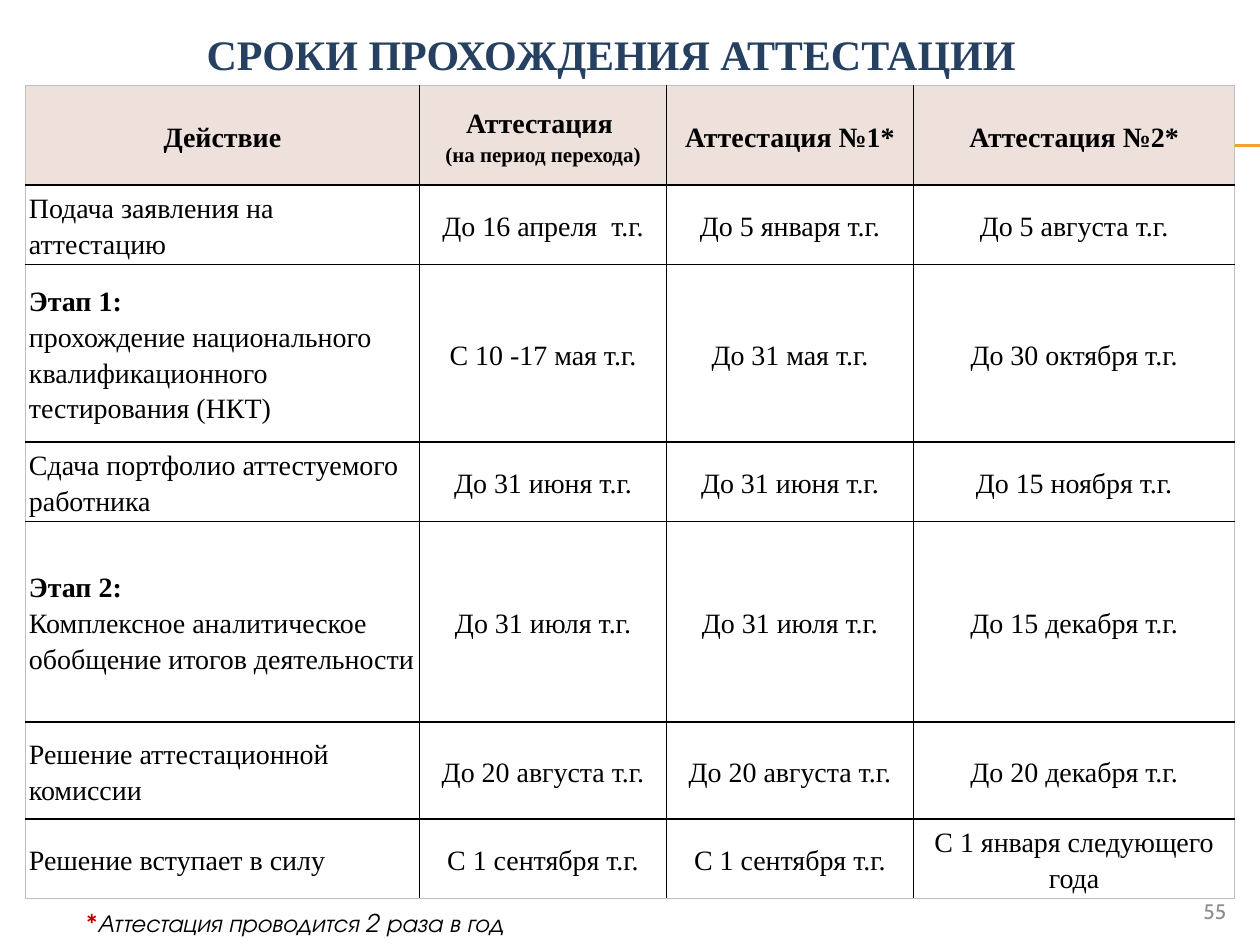
from dataclasses import dataclass

from lxml.etree import SubElement
from pptx import Presentation
from pptx.dml.color import RGBColor
from pptx.enum.shapes import MSO_CONNECTOR
from pptx.enum.text import MSO_ANCHOR, MSO_AUTO_SIZE, PP_ALIGN
from pptx.oxml import parse_xml
from pptx.oxml.ns import nsdecls, qn
from pptx.util import Inches, Pt


@dataclass(frozen=True)
class Theme:
    """Colours, fonts and type sizes of the slide."""
    heading: str = "254061"
    ink: str = "000000"
    header_fill: str = "EEE0DB"
    frame: str = "BFBFBF"
    rule: str = "F0A22E"
    accent: str = "C00000"
    muted: str = "8C8C8C"
    serif: str = "Times New Roman"
    note_font: str = "TeX Gyre Adventor"
    number_font: str = "Cabin"
    title_size: int = 24
    table_size: int = 16
    note_size: int = 14
    small_size: int = 12


@dataclass(frozen=True)
class Run:
    """A piece of text with its own format."""
    text: str
    size: int = Theme.table_size
    color: str = Theme.ink
    font: str = Theme.serif
    bold: bool = False
    italic: bool = False


class SlideBuilder:
    """Adds styled elements to one slide."""

    def __init__(self, slide, theme):
        self.slide = slide
        self.theme = theme

    def add_runs(self, text_frame, paragraphs, alignment, line_spacing=None):
        """Fill a text frame with paragraphs made of runs."""
        for index, runs in enumerate(paragraphs):
            paragraph = text_frame.add_paragraph() if index else text_frame.paragraphs[0]
            paragraph.alignment = alignment
            if line_spacing:
                paragraph.line_spacing = line_spacing
            for part in runs:
                run = paragraph.add_run()
                run.text = part.text
                font = run.font
                font.name, font.size = part.font, Pt(part.size)
                font.bold, font.italic = part.bold, part.italic
                font.color.rgb = RGBColor.from_string(part.color)

    def title(self, text, left, top, width, height):
        """Place and format the title placeholder."""
        shape = self.slide.shapes.title
        shape.left, shape.top = Inches(left), Inches(top)
        shape.width, shape.height = Inches(width), Inches(height)
        shape.text_frame.vertical_anchor = MSO_ANCHOR.MIDDLE
        run = Run(text, self.theme.title_size, self.theme.heading, bold=True)
        self.add_runs(shape.text_frame, [[run]], PP_ALIGN.CENTER)

    def rule(self, left, right, top):
        """Draw a thin horizontal line."""
        connector = self.slide.shapes.add_connector(
            MSO_CONNECTOR.STRAIGHT, Inches(left), Inches(top), Inches(right), Inches(top))
        connector.line.color.rgb = RGBColor.from_string(self.theme.rule)
        connector.line.width = Pt(0.75)
        SubElement(connector._element.spPr, qn("a:effectLst"))

    def text(self, runs, left, top, width, height, alignment=PP_ALIGN.LEFT, wrap=True):
        """Add a one-paragraph text box."""
        shape = self.slide.shapes.add_textbox(
            Inches(left), Inches(top), Inches(width), Inches(height))
        shape.text_frame.word_wrap = wrap
        if not wrap:
            shape.text_frame.auto_size = MSO_AUTO_SIZE.SHAPE_TO_FIT_TEXT
        self.add_runs(shape.text_frame, [runs], alignment)

    def borders(self, cell, outer_sides):
        """Draw cell borders, lighter along the table frame."""
        properties = cell._tc.get_or_add_tcPr()
        for index, side in enumerate("LRTB"):
            outer = side in outer_sides
            color = self.theme.frame if outer else self.theme.ink
            width = Pt(0.5 if outer else 1)
            properties.insert(index, parse_xml(
                f'<a:ln{side} {nsdecls("a")} w="{width}"><a:solidFill>'
                f'<a:srgbClr val="{color}"/></a:solidFill></a:ln{side}>'))

    def table(self, rows, left, top, column_widths, row_heights):
        """Add a table with a tinted header and a left-aligned first column."""
        table = self.slide.shapes.add_table(
            len(rows), len(column_widths), Inches(left), Inches(top),
            Inches(sum(column_widths)), Inches(sum(row_heights))).table
        table.horz_banding = False
        for column, width in zip(table.columns, column_widths):
            column.width = Inches(width)
        for row, height in zip(table.rows, row_heights):
            row.height = Inches(height)
        last_row, last_column = len(rows) - 1, len(column_widths) - 1
        for row_index, row in enumerate(rows):
            for column_index, paragraphs in enumerate(row):
                cell = table.cell(row_index, column_index)
                cell.margin_left = cell.margin_right = Inches(0.03)
                cell.margin_top = cell.margin_bottom = 0
                cell.vertical_anchor = MSO_ANCHOR.MIDDLE
                if row_index == 0:
                    cell.fill.solid()
                    cell.fill.fore_color.rgb = RGBColor.from_string(self.theme.header_fill)
                else:
                    cell.fill.background()
                edges = {"L": column_index == 0, "R": column_index == last_column,
                         "T": row_index == 0, "B": row_index == last_row}
                self.borders(cell, [side for side, outer in edges.items() if outer])
                label = row_index and column_index == 0
                self.add_runs(cell.text_frame, paragraphs,
                              PP_ALIGN.LEFT if label else PP_ALIGN.CENTER, 1.15)


HEADER = [
    [[Run("Действие", bold=True)]],
    [[Run("Аттестация ", bold=True)],
     [Run("(на период перехода)", Theme.small_size, bold=True)]],
    [[Run("Аттестация №1*", bold=True)]],
    [[Run("Аттестация №2*", bold=True)]],
]

SCHEDULE = [
    ("", "Подача заявления на аттестацию",
     "До 16 апреля  т.г.", "До 5 января т.г.", "До 5 августа т.г."),
    ("Этап 1:", "прохождение национального квалификационного тестирования (НКТ)",
     "С 10 -17 мая т.г.", "До 31 мая т.г.", "До 30 октября т.г."),
    ("", "Сдача портфолио аттестуемого работника",
     "До 31 июня т.г.", "До 31 июня т.г.", "До 15 ноября т.г."),
    ("Этап 2:", "Комплексное аналитическое обобщение итогов деятельности",
     "До 31 июля т.г.", "До 31 июля т.г.", "До 15 декабря т.г."),
    ("", "Решение аттестационной комиссии",
     "До 20 августа т.г.", "До 20 августа т.г.", "До 20 декабря т.г."),
    ("", "Решение вступает в силу",
     "С 1 сентября т.г.", "С 1 сентября т.г.", "С 1 января следующего года"),
]


def schedule_row(stage, action, *dates):
    """Turn one schedule entry into table cells."""
    heading = [[Run(stage, bold=True)]] if stage else []
    return [heading + [[Run(action)]]] + [[[Run(date)]] for date in dates]


def main():
    """Build and save the slide."""
    theme = Theme()
    presentation = Presentation()
    presentation.slide_width, presentation.slide_height = Inches(10), Inches(7.5)
    slide = presentation.slides.add_slide(presentation.slide_layouts[5])
    builder = SlideBuilder(slide, theme)
    for top in (1.15, 1.16):
        builder.rule(0.56, 10, top)
    builder.title("СРОКИ ПРОХОЖДЕНИЯ АТТЕСТАЦИИ", 0.35, 0, 9, 0.86)
    builder.table([HEADER] + [schedule_row(*entry) for entry in SCHEDULE], 0.2, 0.68,
                  [3.13, 1.96, 1.96, 2.55], [0.79, 0.63, 1.41, 0.63, 1.59, 0.77, 0.63])
    builder.text([Run("55", theme.small_size, theme.muted, theme.number_font)],
                 9, 7.08, 0.83, 0.27, PP_ALIGN.RIGHT)
    builder.text([Run("*", theme.note_size, theme.accent, theme.note_font, italic=True),
                  Run("Аттестация проводится 2 раза в год", theme.note_size,
                      font=theme.note_font, italic=True)],
                 0.59, 7.16, 3.8, 0.34, wrap=False)
    presentation.save("out.pptx")


if __name__ == "__main__":
    main()
